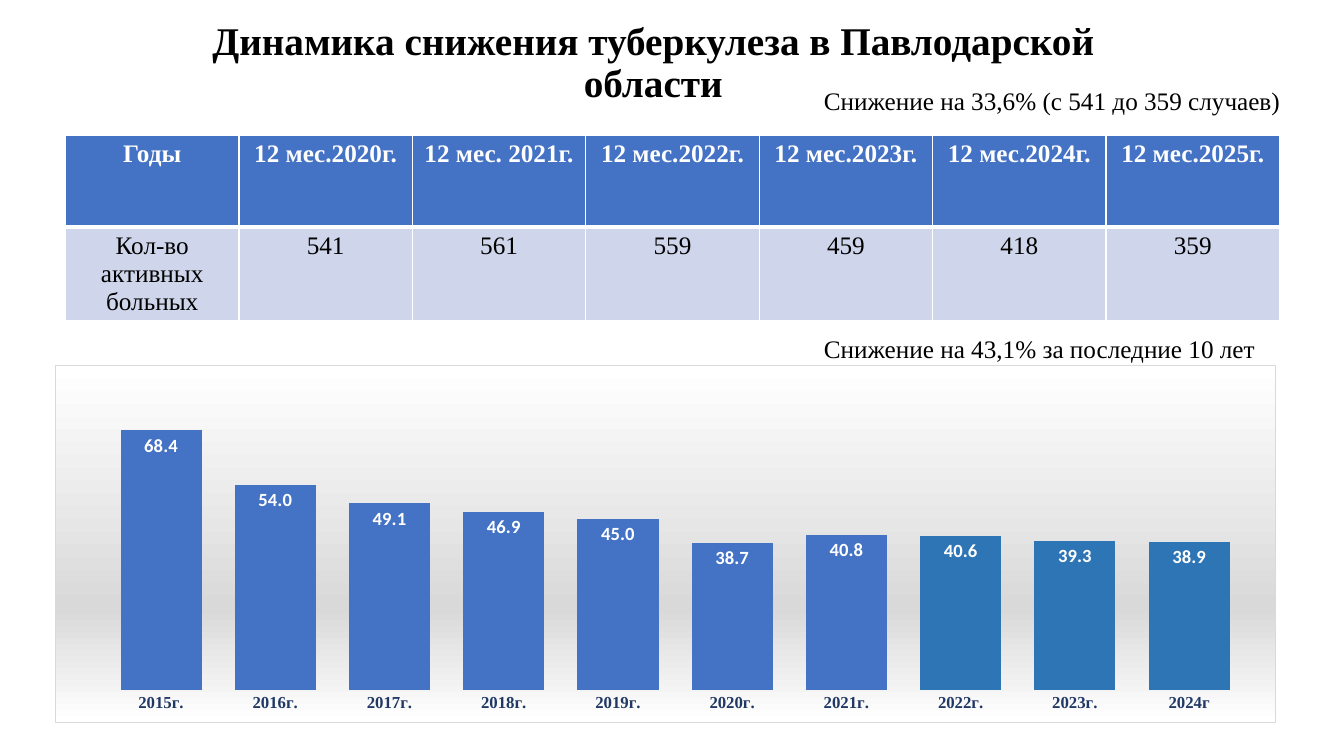
"""Build the slide on the decline of tuberculosis in Pavlodar region."""
from dataclasses import dataclass

from lxml import etree
from pptx import Presentation
from pptx.chart.data import CategoryChartData
from pptx.dml.color import RGBColor
from pptx.enum.chart import XL_CHART_TYPE, XL_LABEL_POSITION, XL_TICK_MARK
from pptx.enum.text import MSO_ANCHOR, MSO_AUTO_SIZE, PP_ALIGN
from pptx.oxml import parse_xml
from pptx.oxml.ns import nsdecls, qn
from pptx.util import Pt

CENTER, BOTTOM = PP_ALIGN.CENTER, MSO_ANCHOR.BOTTOM
COLUMN, INSIDE_END = XL_CHART_TYPE.COLUMN_CLUSTERED, XL_LABEL_POSITION.INSIDE_END
NO_TICK, NO_FIT = XL_TICK_MARK.NONE, MSO_AUTO_SIZE.NONE


@dataclass(frozen=True)
class Theme:
    """Colours, fonts and type sizes."""
    black: str = "000000"
    white: str = "FFFFFF"
    blue: str = "4472C4"
    recent: str = "2E75B6"
    navy: str = "203864"
    pale: str = "CFD5EA"
    grey: str = "D9D9D9"
    serif: str = "Times New Roman"
    sans: str = "Calibri"
    title: float = 28
    body: float = 18
    label: float = 13.3
    axis: float = 12
    chart: float = 10


T = Theme()


def set_font(font, size, color, name=T.serif, bold=False):
    """Format a font."""
    for key, value in {"size": Pt(size), "name": name, "bold": bold}.items():
        setattr(font, key, value)
    font.color.rgb = RGBColor.from_string(color)


def write(tf, text, size, color, bold=False, align=None):
    """Write one formatted paragraph into a text frame."""
    p = tf.paragraphs[0]
    p.alignment = align
    r = p.add_run()
    r.text = text
    set_font(r.font, size, color, bold=bold)
    return p


prs = Presentation()
prs.slide_width, prs.slide_height = Pt(960), Pt(540)
s = prs.slides.add_slide(prs.slide_layouts[5])

title = s.shapes.title
title.left, title.top, title.width, title.height = Pt(125.3), Pt(36.7), Pt(682.6), Pt(42.5)
tf = title.text_frame
for key, value in {"vertical_anchor": BOTTOM, "auto_size": NO_FIT, "word_wrap": True}.items():
    setattr(tf, key, value)
p = write(tf, "Динамика снижения туберкулеза в Павлодарской области",
          T.title, T.black, True, CENTER)
p.line_spacing = 0.9

cases = {"2015г.": 68.4, "2016г.": 54, "2017г.": 49.1, "2018г.": 46.9, "2019г.": 45,
         "2020г.": 38.7, "2021г.": 40.8, "2022г.": 40.6, "2023г.": 39.3, "2024г": 38.9}
data = CategoryChartData(number_format="0.0")
data.categories = list(cases)
data.add_series("Series 1", list(cases.values()))
chart = s.shapes.add_chart(COLUMN, Pt(39), Pt(260.8), Pt(872.6), Pt(255.5), data).chart
chart.has_legend = chart.has_title = False
set_font(chart.font, T.chart, T.black, T.sans)

value_axis = chart.value_axis
for key, value in {"minimum_scale": 0, "maximum_scale": 80, "visible": False,
                   "has_major_gridlines": False}.items():
    setattr(value_axis, key, value)
years = chart.category_axis
years.major_tick_mark = years.minor_tick_mark = NO_TICK
years.format.line.fill.background()
set_font(years.tick_labels.font, T.axis, T.navy, bold=True)

plot = chart.plots[0]
plot.gap_width, plot.vary_by_categories, plot.has_data_labels = 41, False, True
labels = plot.data_labels
for key, value in {"show_value": True, "position": INSIDE_END, "number_format": "0.0",
                   "number_format_is_linked": False}.items():
    setattr(labels, key, value)
set_font(labels.font, T.label, T.white, T.sans, True)
bars = plot.series[0]
bar_fills = [(bars, T.blue)] + [(bars.points[i], T.recent) for i in (7, 8, 9)]
for bar, color in bar_fills:
    bar.format.fill.solid()
    bar.format.fill.fore_color.rgb = RGBColor.from_string(color)

stops = "".join(f'<a:gs pos="{pos}"><a:srgbClr val="{color}"/></a:gs>'
                for pos, color in ((0, T.white), (68000, T.grey), (100000, T.white)))
chart_xml = chart.element.find(qn("c:chart"))
chart_xml.addnext(parse_xml(
    f'<c:spPr {nsdecls("c", "a")}><a:gradFill><a:gsLst>{stops}</a:gsLst>'
    f'<a:lin ang="5400000" scaled="0"/></a:gradFill><a:ln w="{Pt(0.75)}">'
    f'<a:solidFill><a:srgbClr val="{T.grey}"/></a:solidFill></a:ln></c:spPr>'))
plot_area = chart_xml.find(qn("c:plotArea"))
for old in plot_area.findall(qn("c:layout")):
    plot_area.remove(old)
layout = parse_xml(f'<c:layout {nsdecls("c")}><c:manualLayout/></c:layout>')
for tag, value in {"layoutTarget": "inner", "xMode": "edge", "yMode": "edge", "x": 0.04,
                   "y": 0.058, "w": 0.936, "h": 0.851}.items():
    etree.SubElement(layout[0], qn(f"c:{tag}")).set("val", str(value))
plot_area.insert(0, layout)

rows = [["Годы", "12 мес.2020г.", "12 мес. 2021г.", "12 мес.2022г.", "12 мес.2023г.",
         "12 мес.2024г.", "12 мес.2025г."],
        ["Кол-во активных больных", "541", "561", "559", "459", "418", "359"]]
styles = [(T.blue, T.white, True, {"L": 1, "R": 1, "T": 1, "B": 3}),
          (T.pale, T.black, False, {"L": 1, "R": 1, "T": 3, "B": 1})]
table = s.shapes.add_table(2, 7, Pt(46.8), Pt(96.5), Pt(867.3), Pt(131)).table
for column in table.columns:
    column.width = Pt(123.9)
for row, texts, (fill, color, bold, borders) in zip(table.rows, rows, styles):
    row.height = Pt(65.5)
    for cell, text in zip(row.cells, texts):
        write(cell.text_frame, text, T.body, color, bold, CENTER)
        cell.fill.solid()
        cell.fill.fore_color.rgb = RGBColor.from_string(fill)
        tc_pr = cell.fill._xPr
        for i, (side, width) in enumerate(borders.items()):
            tc_pr.insert(i, parse_xml(
                f'<a:ln{side} {nsdecls("a")} w="{Pt(width)}"><a:solidFill>'
                f'<a:srgbClr val="{T.white}"/></a:solidFill></a:ln{side}>'))

for text, top in (("Снижение на 33,6% (с 541 до 359 случаев)", 57.6),
                  ("Снижение на 43,1% за последние 10 лет", 234.7)):
    tf = s.shapes.add_textbox(Pt(581.4), Pt(top), Pt(350), Pt(29)).text_frame
    tf.word_wrap = True
    write(tf, text, T.body, T.black)

prs.save("out.pptx")
